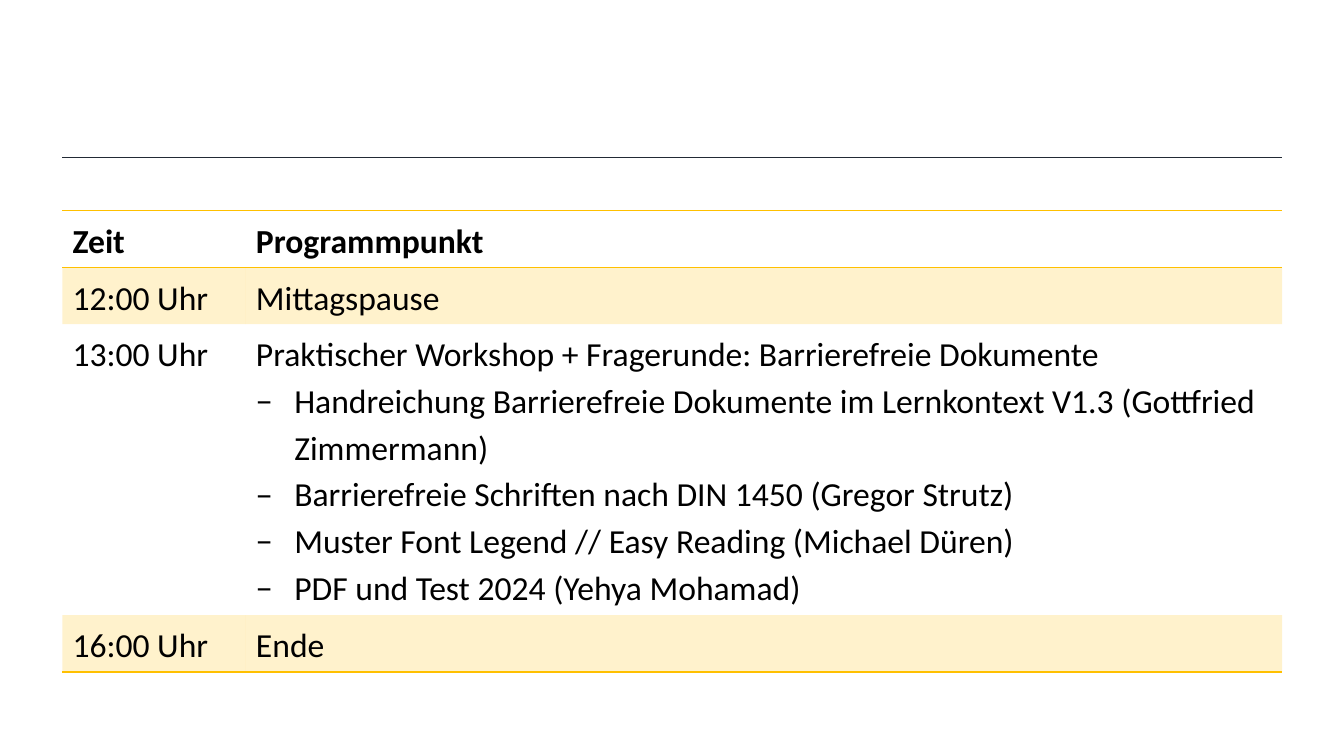
from lxml.etree import SubElement
from pptx import Presentation
from pptx.dml.color import RGBColor
from pptx.enum.shapes import MSO_CONNECTOR
from pptx.oxml import parse_xml
from pptx.oxml.ns import nsdecls, qn
from pptx.util import Inches, Pt

COLORS = {"text": "000000", "rule": "222A35", "accent": "FFC000"}
FONT = {"name": "Calibri", "size": Pt(24)}
PLAIN_TABLE = "{2D5ABB26-0587-4C30-8999-92F81FD0307C}"

# Grid of 100 columns by 100 rows
LEFT, TIME_COLS, TOPIC_COLS = 4.65, 13.65, 77.1
RULE_TOP, TABLE_TOP = 20.8, 27.85
LINE_ROWS, WORKSHOP_ROWS = 7.5, 38.5

# Each entry: time, topic, list of sub-items
AGENDA = [
    ("Zeit", "Programmpunkt", []),
    ("12:00 Uhr", "Mittagspause", []),
    ("13:00 Uhr", "Praktischer Workshop + Fragerunde: Barrierefreie Dokumente", [
        "Handreichung Barrierefreie Dokumente im Lernkontext V1.3 (Gottfried Zimmermann)",
        "Barrierefreie Schriften nach DIN 1450 (Gregor Strutz)",
        "Muster Font Legend // Easy Reading (Michael Düren)",
        "PDF und Test 2024 (Yehya Mohamad)",
    ]),
    ("16:00 Uhr", "Ende", []),
]


class AgendaSlide:
    def __init__(self, prs):
        self.cw, self.rh = prs.slide_width / 100, prs.slide_height / 100
        self.s = prs.slides.add_slide(prs.slide_layouts[6])

    def x(self, cols):
        return round(cols * self.cw)

    def y(self, rows):
        return round(rows * self.rh)

    def rule(self, left, top, cols):
        line = self.s.shapes.add_connector(
            MSO_CONNECTOR.STRAIGHT, self.x(left), self.y(top), self.x(left + cols), self.y(top))
        line.line.color.rgb = RGBColor.from_string(COLORS["rule"])
        line.line.width = Pt(0.5)
        SubElement(line._element.spPr, qn("a:effectLst"))

    def paragraph(self, p, text, bold=False, bullet=False):
        p.line_spacing = 1.14
        if bullet:
            pPr = p._p.get_or_add_pPr()
            pPr.set("marL", str(Inches(0.38)))
            pPr.set("indent", str(-Inches(0.38)))
            SubElement(pPr, qn("a:buFont"), typeface="Calibri")
            SubElement(pPr, qn("a:buChar"), char="−")
        r = p.add_run()
        r.text = text
        for name, value in {**FONT, "bold": bold}.items():
            setattr(r.font, name, value)
        r.font.color.rgb = RGBColor.from_string(COLORS["text"])

    def cell(self, cell, text, items=(), bold=False, shaded=False, edges=()):
        tf = cell.text_frame
        self.paragraph(tf.paragraphs[0], text, bold)
        for item in items:
            self.paragraph(tf.add_paragraph(), item, bullet=True)
        tcPr = cell._tc.get_or_add_tcPr()
        if shaded:
            cell.fill.solid()
            cell.fill.fore_color.rgb = RGBColor.from_string(COLORS["accent"])
            SubElement(tcPr.find(".//" + qn("a:srgbClr")), qn("a:alpha"), val="20000")
        else:
            cell.fill.background()
        # Borders stand before the fill
        for i, edge in enumerate(edges):
            tcPr.insert(i, parse_xml(
                f'<a:{edge} {nsdecls("a")} w="{Pt(1)}"><a:solidFill>'
                f'<a:srgbClr val="{COLORS["accent"]}"/></a:solidFill></a:{edge}>'))

    def table(self, left, top, cols, rows, agenda):
        tbl = self.s.shapes.add_table(
            len(rows), len(cols), self.x(left), self.y(top),
            self.x(sum(cols)), self.y(sum(rows))).table
        tbl.first_row = tbl.horz_banding = False
        tbl._tbl.tblPr.find(qn("a:tableStyleId")).text = PLAIN_TABLE
        for column, width in zip(tbl.columns, cols):
            column.width = self.x(width)
        for row, height in zip(tbl.rows, rows):
            row.height = self.y(height)
        edges = {0: ("lnT", "lnB"), len(rows) - 1: ("lnB",)}
        for i, (time, topic, items) in enumerate(agenda):
            style = {"bold": i == 0, "shaded": i % 2 == 1, "edges": edges.get(i, ())}
            self.cell(tbl.cell(i, 0), time, **style)
            self.cell(tbl.cell(i, 1), topic, items, **style)


def main():
    prs = Presentation()
    prs.slide_width, prs.slide_height = Inches(13.33), Inches(7.5)
    slide = AgendaSlide(prs)

    # Rule below the header area
    slide.rule(LEFT, RULE_TOP, TIME_COLS + TOPIC_COLS)

    # Programme table
    rows = [WORKSHOP_ROWS if items else LINE_ROWS for _, _, items in AGENDA]
    slide.table(LEFT, TABLE_TOP, [TIME_COLS, TOPIC_COLS], rows, AGENDA)

    prs.save("out.pptx")


if __name__ == "__main__":
    main()
